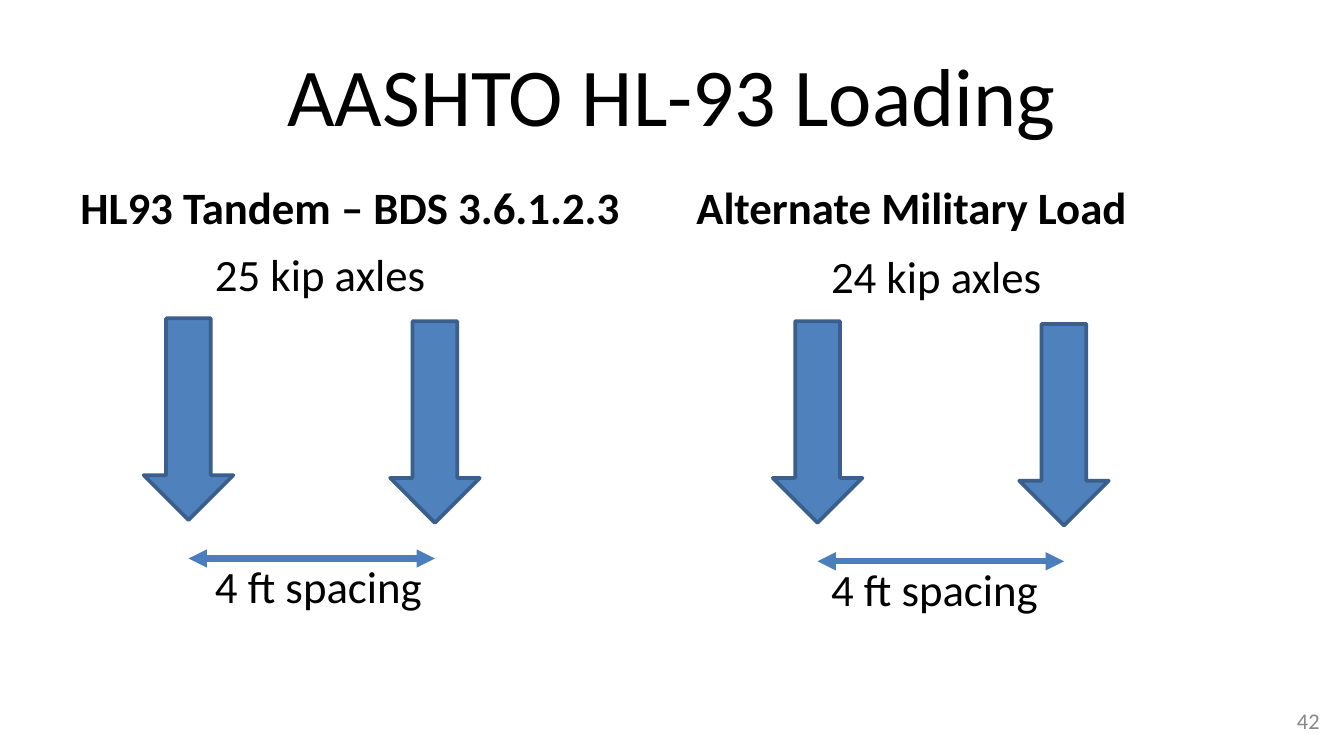
from lxml.etree import SubElement
from pptx import Presentation
from pptx.dml.color import RGBColor
from pptx.enum.shapes import MSO_CONNECTOR, MSO_SHAPE
from pptx.enum.text import MSO_ANCHOR, PP_ALIGN
from pptx.oxml.ns import qn
from pptx.util import Pt

FONT = "Calibri"
COLORS = {
    "text": "000000",
    "page": "898989",
    "axle": "4F81BD",
    "axle_edge": "3A5F8C",
    "spacing": "4B7EBC",
}

TITLE = "AASHTO HL-93 Loading"
PAGE_NUMBER = "42"
# left: column edge, axle: left of first axle arrow, drop: downward shift
LOADS = [
    {"heading": "HL93 Tandem – BDS 3.6.1.2.3", "axles": "25 kip axles",
     "spacing": "4 ft spacing", "left": 36, "axle": 77, "drop": 0},
    {"heading": "Alternate Military Load", "axles": "24 kip axles",
     "spacing": "4 ft spacing", "left": 366, "axle": 414, "drop": 1.5},
]

COLUMN_WIDTH = 318
LABEL_INDENT = 72
LABEL_GAP = 138.5
AXLE_TOP, AXLE_WIDTH, AXLE_HEIGHT = 170.6, 48, 108
AXLE_PITCH, AXLE_STEP = 132, 1.5
SPACING_TOP = 299.2


def color(name):
    return RGBColor.from_string(COLORS[name])


def add_text(slide, lines, box, size, ink="text", bold=False, gap=0,
             align=PP_ALIGN.LEFT, anchor=MSO_ANCHOR.TOP, indent=0):
    """Add a text box; gap is the space before every line but the first."""
    shape = slide.shapes.add_textbox(*map(Pt, box))
    frame = shape.text_frame
    frame.word_wrap = True
    frame.vertical_anchor = anchor
    frame.margin_left = Pt(7.2 + indent)
    for index, line in enumerate(lines):
        paragraph = frame.add_paragraph() if index else frame.paragraphs[0]
        paragraph.alignment = align
        paragraph.space_before = Pt(gap if index else 0)
        run = paragraph.add_run()
        run.text = line
        run.font.name = FONT
        run.font.size = Pt(size)
        run.font.bold = bold
        run.font.color.rgb = color(ink)


def add_axle(slide, left, top):
    shape = slide.shapes.add_shape(
        MSO_SHAPE.DOWN_ARROW, Pt(left), Pt(top), Pt(AXLE_WIDTH), Pt(AXLE_HEIGHT))
    shape.shadow.inherit = False
    shape.fill.solid()
    shape.fill.fore_color.rgb = color("axle")
    shape.line.color.rgb = color("axle_edge")
    shape.line.width = Pt(2)


def add_spacing_arrow(slide, left, right, top):
    connector = slide.shapes.add_connector(
        MSO_CONNECTOR.STRAIGHT, Pt(left), Pt(top), Pt(right), Pt(top))
    connector.line.color.rgb = color("spacing")
    connector.line.width = Pt(3.25)
    line = connector.line._get_or_add_ln()
    for end in ("a:headEnd", "a:tailEnd"):
        SubElement(line, qn(end), type="triangle")
    SubElement(connector._element.spPr, qn("a:effectLst"))


def add_load(slide, load):
    left, drop = load["left"], load["drop"]
    add_text(slide, [load["heading"]], (left, 90.5, COLUMN_WIDTH, 38), 24,
             bold=True, anchor=MSO_ANCHOR.BOTTOM)
    add_text(slide, [load["axles"], load["spacing"]],
             (left, 128.4 + drop, COLUMN_WIDTH, 233), 24,
             gap=LABEL_GAP, indent=LABEL_INDENT)
    for index in range(2):
        add_axle(slide, load["axle"] + index * AXLE_PITCH,
                 AXLE_TOP + drop + index * AXLE_STEP)
    center = load["axle"] + AXLE_WIDTH / 2
    add_spacing_arrow(slide, center, center + AXLE_PITCH, SPACING_TOP + drop)


def main():
    presentation = Presentation()
    presentation.slide_width = Pt(720)
    presentation.slide_height = Pt(405)
    slide = presentation.slides.add_slide(presentation.slide_layouts[6])
    add_text(slide, [TITLE], (36, 16.5, 648, 67.5), 44,
             align=PP_ALIGN.CENTER, anchor=MSO_ANCHOR.MIDDLE)
    for load in LOADS:
        add_load(slide, load)
    add_text(slide, [PAGE_NUMBER], (546, 375.4, 168, 21.6), 12, ink="page",
             align=PP_ALIGN.RIGHT, anchor=MSO_ANCHOR.MIDDLE)
    presentation.save("out.pptx")


if __name__ == "__main__":
    main()
